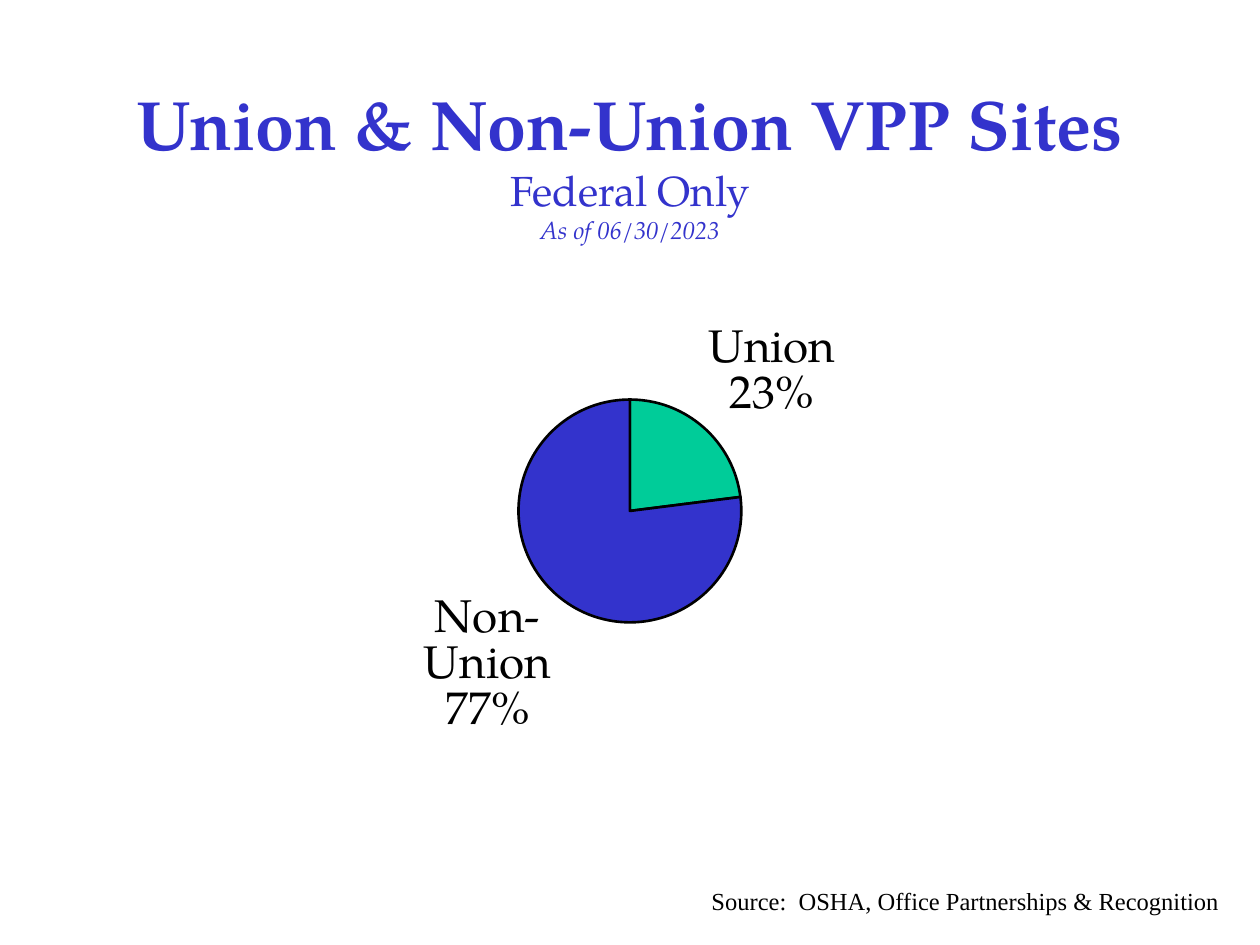
from lxml import etree
from pptx import Presentation
from pptx.chart.data import CategoryChartData
from pptx.dml.color import RGBColor
from pptx.enum.chart import XL_CHART_TYPE, XL_LABEL_POSITION
from pptx.enum.text import MSO_ANCHOR, PP_ALIGN
from pptx.oxml.ns import qn
from pptx.util import Pt

COLORS = {"title": "3333CC", "union": "00CC99", "non_union": "3333CC", "ink": "000000"}
SERIF = "TeX Gyre Pagella"


def rgb(name):
    return RGBColor.from_string(COLORS[name])


def style_font(font, face, size, color, bold=False, italic=False):
    font.name, font.size = face, Pt(size)
    font.bold, font.italic = bold, italic
    font.color.rgb = rgb(color)


def add_heading(slide, left, top, width, height):
    frame = slide.shapes.add_textbox(Pt(left), Pt(top), Pt(width), Pt(height)).text_frame
    frame.word_wrap = True
    frame.vertical_anchor = MSO_ANCHOR.MIDDLE
    lines = [
        ("Union & Non-Union VPP Sites", 40, True, False),
        ("Federal Only", 24, False, False),
        ("As of 06/30/2023", 14, False, True),
    ]
    frame.text = "\n".join(line[0] for line in lines)
    for paragraph, (_, size, bold, italic) in zip(frame.paragraphs, lines):
        paragraph.alignment = PP_ALIGN.CENTER
        style_font(paragraph.font, SERIF, size, "title", bold, italic)


def set_plot_layout(chart, x, y, w, h):
    """Fix the inner plot area, in fractions of the chart's box."""
    plot_area = chart._chartSpace.chart.plotArea
    for old_layout in plot_area.findall(qn("c:layout")):
        plot_area.remove(old_layout)
    layout = etree.Element(qn("c:layout"))
    manual = etree.SubElement(layout, qn("c:manualLayout"))
    settings = {"layoutTarget": "inner", "xMode": "edge", "yMode": "edge",
                "x": x, "y": y, "w": w, "h": h}
    for tag, value in settings.items():
        etree.SubElement(manual, qn(f"c:{tag}")).set("val", str(value))
    plot_area.insert(0, layout)


def add_site_share_pie(slide, left, top, width, height):
    shares = CategoryChartData(number_format="General")
    shares.categories = ["Union", "Non-Union"]
    shares.add_series("Sites", (23, 77))
    chart = slide.shapes.add_chart(
        XL_CHART_TYPE.PIE, Pt(left), Pt(top), Pt(width), Pt(height), shares).chart
    chart.has_title = False
    chart.has_legend = False
    style_font(chart.font, SERIF, 26.2, "ink")
    set_plot_layout(chart, 0.31, 0.34, 0.38, 0.32)

    pie = chart.plots[0]
    pie.vary_by_categories = True
    for index, color in enumerate(("union", "non_union")):
        slice_format = pie.series[0].points[index].format
        slice_format.fill.solid()
        slice_format.fill.fore_color.rgb = rgb(color)
        slice_format.line.color.rgb = rgb("ink")
        slice_format.line.width = Pt(1.5)

    pie.has_data_labels = True
    labels = pie.data_labels
    labels.show_category_name = True
    labels.show_percentage = True
    labels.show_value = False
    labels.number_format = "0%"
    labels.number_format_is_linked = False
    labels.position = XL_LABEL_POSITION.OUTSIDE_END
    style_font(labels.font, SERIF, 26.2, "ink")
    separator = etree.Element(qn("c:separator"))
    separator.text = "\n"
    labels._element.find(qn("c:showBubbleSize")).addnext(separator)


def add_source_note(slide, left, top, width, height):
    frame = slide.shapes.add_textbox(Pt(left), Pt(top), Pt(width), Pt(height)).text_frame
    frame.word_wrap = False
    frame.vertical_anchor = MSO_ANCHOR.BOTTOM
    frame.margin_bottom = Pt(5)
    frame.text = "Source:  OSHA, Office Partnerships & Recognition"
    style_font(frame.paragraphs[0].font, "Times New Roman", 14, "ink")


def main():
    deck = Presentation()
    deck.slide_width, deck.slide_height = Pt(720), Pt(540)
    slide = deck.slides.add_slide(deck.slide_layouts[6])
    add_heading(slide, 54, 42, 612, 102)
    add_site_share_pie(slide, 143.5, 93, 433, 398)
    add_source_note(slide, 399.5, 492, 310, 36)
    deck.save("out.pptx")


if __name__ == "__main__":
    main()
